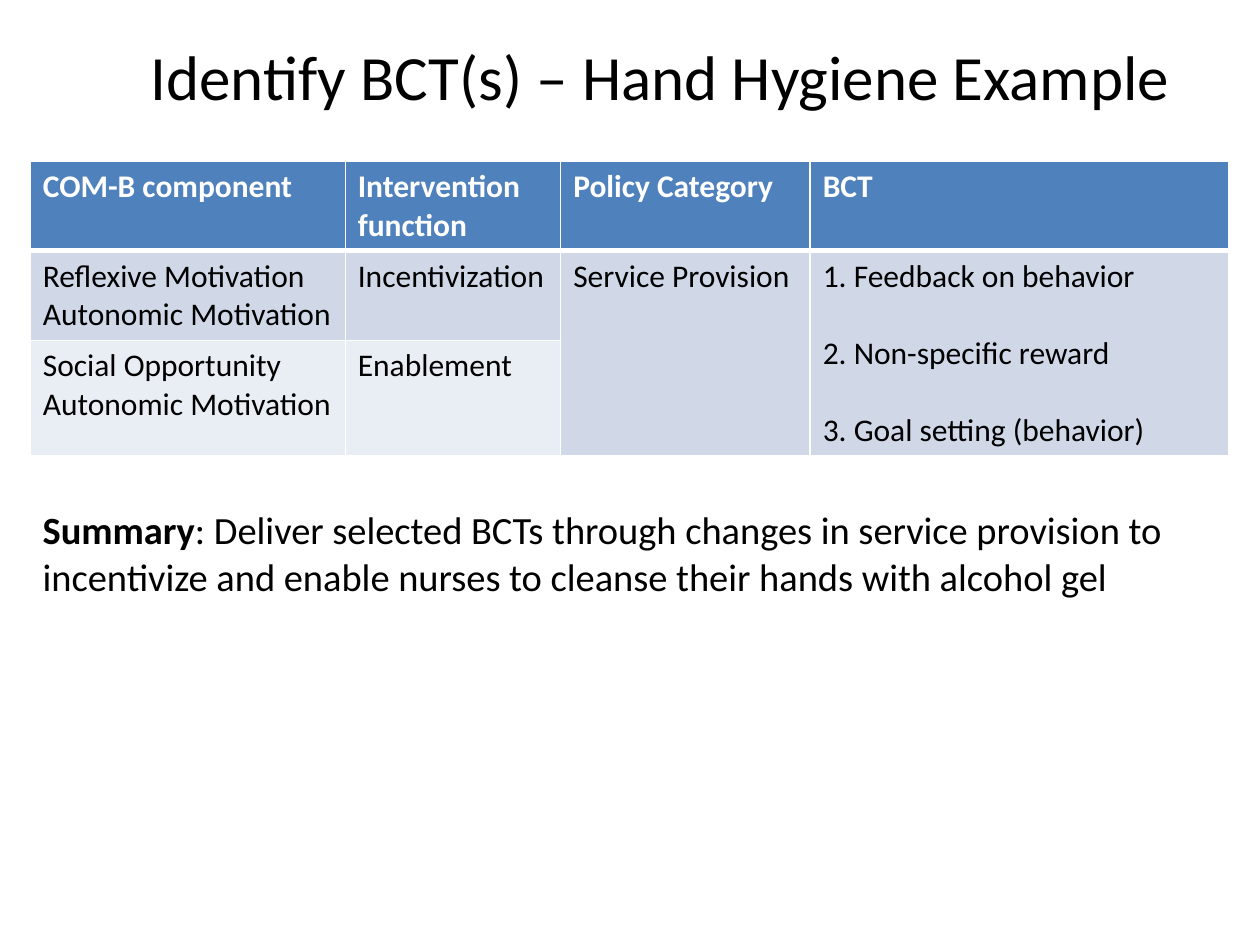
from dataclasses import dataclass

import pptx
import pptx.dml.color
import pptx.enum.text
import pptx.oxml
import pptx.oxml.ns
import pptx.util

Inches = pptx.util.Inches
Pt = pptx.util.Pt


@dataclass(frozen=True)
class Theme:
    font: str = "Calibri"
    text: str = "000000"
    light: str = "FFFFFF"
    header: str = "4F81BD"
    bands: tuple = ("D0D8E8", "E9EDF4")
    title_size: int = 36
    table_size: int = 18
    summary_size: int = 22


THEME = Theme()
COLUMN_WIDTHS = (2.5, 1.71, 1.98, 3.32)
ROW_HEIGHTS = (0.7, 0.7, 0.9)
HEADINGS = ("COM-B component", "Intervention function", "Policy Category", "BCT")
ROWS = (
    (
        ("Reflexive Motivation", "Autonomic Motivation"),
        ("Incentivization",),
        ("Service Provision",),
        ("1. Feedback on behavior", "2. Non-specific reward", "3. Goal setting (behavior)"),
    ),
    (("Social Opportunity", "Autonomic Motivation"), ("Enablement",)),
)
MERGED_COLUMNS = (2, 3)
BCT_COLUMN = 3


def add_text(paragraph, text, size, color=THEME.text, bold=False, align=None, space_before=0):
    paragraph.alignment = align
    paragraph.space_before = Pt(space_before)
    run = paragraph.add_run()
    run.text = text
    run.font.name = THEME.font
    run.font.size = Pt(size)
    run.font.bold = bold
    run.font.color.rgb = pptx.dml.color.RGBColor.from_string(color)


def set_borders(cell, bottom_width=1):
    properties = cell._tc.get_or_add_tcPr()
    for side, width in (("L", 1), ("R", 1), ("T", 1), ("B", bottom_width)):
        properties.append(pptx.oxml.parse_xml(
            f'<a:ln{side} {pptx.oxml.ns.nsdecls("a")} w="{Pt(width)}"><a:solidFill>'
            f'<a:srgbClr val="{THEME.light}"/></a:solidFill></a:ln{side}>'
        ))


def fill_cell(cell, lines, fill, bottom_width=1, gap=0, **text_format):
    set_borders(cell, bottom_width)
    cell.fill.solid()
    cell.fill.fore_color.rgb = pptx.dml.color.RGBColor.from_string(fill)
    for index, line in enumerate(lines):
        paragraph = cell.text_frame.add_paragraph() if index else cell.text_frame.paragraphs[0]
        add_text(paragraph, line, THEME.table_size,
                 space_before=gap if index else 0, **text_format)


def add_title(slide, text):
    title = slide.shapes.title
    title.left, title.top = Inches(0.74), Inches(0.11)
    title.width, title.height = Inches(9), Inches(0.98)
    title.text_frame.vertical_anchor = pptx.enum.text.MSO_ANCHOR.MIDDLE
    add_text(title.text_frame.paragraphs[0], text, THEME.title_size,
             align=pptx.enum.text.PP_ALIGN.CENTER)


def add_bct_table(slide):
    table = slide.shapes.add_table(
        len(ROW_HEIGHTS), len(COLUMN_WIDTHS), Inches(0.24), Inches(1.28),
        Inches(sum(COLUMN_WIDTHS)), Inches(sum(ROW_HEIGHTS)),
    ).table
    for column, width in zip(table.columns, COLUMN_WIDTHS):
        column.width = Inches(width)
    for row, height in zip(table.rows, ROW_HEIGHTS):
        row.height = Inches(height)
    for column in MERGED_COLUMNS:
        table.cell(1, column).merge(table.cell(2, column))
    for column, heading in enumerate(HEADINGS):
        fill_cell(table.cell(0, column), (heading,), THEME.header,
                  bottom_width=3, color=THEME.light, bold=True)
    for row, (contents, band) in enumerate(zip(ROWS, THEME.bands), start=1):
        for column, lines in enumerate(contents):
            fill_cell(table.cell(row, column), lines, band,
                      gap=22 if column == BCT_COLUMN else 0)


def add_summary(slide, label, text):
    box = slide.shapes.add_textbox(Inches(0.24), Inches(3.97), Inches(9.51), Inches(0.84))
    box.text_frame.word_wrap = True
    box.text_frame.auto_size = pptx.enum.text.MSO_AUTO_SIZE.SHAPE_TO_FIT_TEXT
    paragraph = box.text_frame.paragraphs[0]
    add_text(paragraph, label, THEME.summary_size, bold=True)
    add_text(paragraph, text, THEME.summary_size)


def main():
    presentation = pptx.Presentation()
    presentation.slide_width = Inches(10)
    presentation.slide_height = Inches(7.5)
    slide = presentation.slides.add_slide(presentation.slide_layouts.get_by_name("Title Only"))
    add_title(slide, "Identify BCT(s) – Hand Hygiene Example")
    add_bct_table(slide)
    add_summary(slide, "Summary", ": Deliver selected BCTs through changes in service provision "
                "to incentivize and enable nurses to cleanse their hands with alcohol gel")
    presentation.save("out.pptx")


if __name__ == "__main__":
    main()
